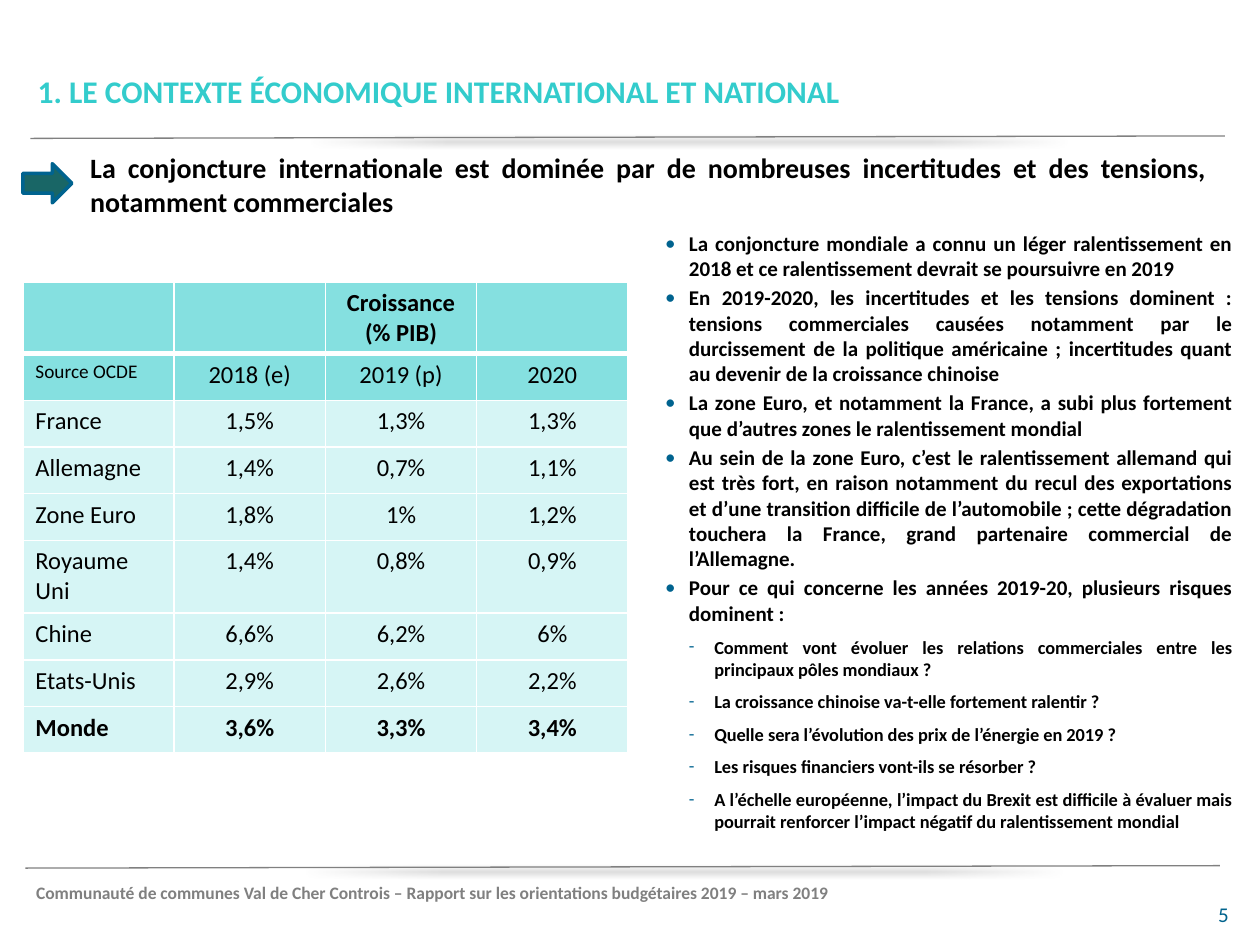
from dataclasses import dataclass

import pptx
import pptx.dml.color
import pptx.enum.shapes
import pptx.enum.text
import pptx.oxml
import pptx.oxml.ns
import pptx.util
from pptx.util import Cm, Pt

ALIGN = pptx.enum.text.PP_ALIGN
ANCHOR = pptx.enum.text.MSO_ANCHOR
NS = pptx.oxml.ns.nsdecls("a")


@dataclass(frozen=True)
class Theme:
    font: str = "Calibri"
    black: str = "000000"
    white: str = "FFFFFF"
    grey: str = "808080"
    turquoise: str = "33CCCC"
    blue: str = "00638F"
    page_blue: str = "00638D"
    arrow: str = "196666"
    header_fill: str = "85E0E0"
    body_fill: str = "D6F5F5"
    title: float = 18
    heading: float = 16
    table: float = 14
    bullet: float = 12
    sub_bullet: float = 10.5
    source: float = 11
    footer: float = 10


T = Theme()

TABLE_ROWS = [
    ("", "", "Croissance (% PIB)", ""),
    ("Source OCDE", "2018 (e)", "2019 (p)", "2020"),
    ("France", "1,5%", "1,3%", "1,3%"),
    ("Allemagne", "1,4%", "0,7%", "1,1%"),
    ("Zone Euro", "1,8%", "1%", "1,2%"),
    ("Royaume Uni", "1,4%", "0,8%", "0,9%"),
    ("Chine", "6,6%", "6,2%", "6%"),
    ("Etats-Unis", "2,9%", "2,6%", "2,2%"),
    ("Monde", "3,6%", "3,3%", "3,4%"),
]
ROW_HEIGHT = 0.94
TALL_ROWS = {0: 1.42, 5: 1.47}

FINDINGS = [
    "La conjoncture mondiale a connu un léger ralentissement en 2018 et ce ralentissement devrait se "
    "poursuivre en 2019",
    "En 2019-2020, les incertitudes et les tensions dominent : tensions commerciales causées notamment "
    "par le durcissement de la politique américaine ; incertitudes quant au devenir de la croissance chinoise",
    "La zone Euro, et notamment la France, a subi plus fortement que d’autres zones le ralentissement mondial",
    "Au sein de la zone Euro, c’est le ralentissement allemand qui est très fort, en raison notamment du "
    "recul des exportations et d’une transition difficile de l’automobile ; cette dégradation touchera la "
    "France, grand partenaire commercial de l’Allemagne.",
    "Pour ce qui concerne les années 2019-20, plusieurs risques dominent :",
]
RISKS = [
    "Comment vont évoluer les relations commerciales entre les principaux pôles mondiaux ?",
    "La croissance chinoise va-t-elle fortement ralentir ?",
    "Quelle sera l’évolution des prix de l’énergie en 2019 ?",
    "Les risques financiers vont-ils se résorber ?",
    "A l’échelle européenne, l’impact du Brexit est difficile à évaluer mais pourrait renforcer l’impact "
    "négatif du ralentissement mondial",
]


def rgb(color):
    return pptx.dml.color.RGBColor.from_string(color)


def add_run(p, text, size, color=T.black, bold=False):
    r = p.add_run()
    r.text = text
    r.font.name = T.font
    r.font.size = Pt(size)
    r.font.bold = bold
    r.font.color.rgb = rgb(color)


def add_frame(s, left, top, width, height):
    """Add an empty wrapping text box and return its text frame."""
    tf = s.shapes.add_textbox(Cm(left), Cm(top), Cm(width), Cm(height)).text_frame
    tf.word_wrap = True
    return tf


def add_text(s, box, text, size, color=T.black, bold=True, align=ALIGN.LEFT, anchor=ANCHOR.TOP):
    tf = add_frame(s, *box)
    tf.vertical_anchor = anchor
    p = tf.paragraphs[0]
    p.alignment = align
    add_run(p, text, size, color, bold)


def add_rule(s, left, top):
    """Add a slightly rising grey line with a soft shadow."""
    c = s.shapes.add_connector(pptx.enum.shapes.MSO_CONNECTOR.STRAIGHT,
                               Cm(left), Cm(top), Cm(left + 24.08), Cm(top - 0.05))
    c.line.color.rgb = rgb(T.grey)
    c.line.width = Pt(0.75)
    c._element.spPr.append(pptx.oxml.parse_xml(
        f'<a:effectLst {NS}><a:outerShdw blurRad="{Pt(4)}" dist="{Pt(3)}" dir="2700000">'
        f'<a:srgbClr val="{T.black}"><a:alpha val="40000"/></a:srgbClr></a:outerShdw></a:effectLst>'))


def add_arrow(s):
    sp = s.shapes.add_shape(pptx.enum.shapes.MSO_SHAPE.RIGHT_ARROW,
                            Cm(0.46), Cm(3.3), Cm(0.99), Cm(0.79))
    sp.shadow.inherit = False
    sp.fill.solid()
    sp.fill.fore_color.rgb = rgb(T.arrow)
    sp.line.color.rgb = rgb(T.blue)
    sp.line.width = Pt(2)


def set_borders(cell, bottom):
    tc_pr = cell._tc.get_or_add_tcPr()
    widths = {"lnL": 1, "lnR": 1, "lnT": 1, "lnB": bottom}
    for i, (side, width) in enumerate(widths.items()):
        tc_pr.insert(i, pptx.oxml.parse_xml(
            f'<a:{side} {NS} w="{Pt(width)}"><a:solidFill><a:srgbClr val="{T.white}"/>'
            f'</a:solidFill></a:{side}>'))


def add_growth_table(s):
    heights = [TALL_ROWS.get(i, ROW_HEIGHT) for i in range(len(TABLE_ROWS))]
    table = s.shapes.add_table(len(TABLE_ROWS), 4, Cm(0.46), Cm(5.69),
                               Cm(12.2), Cm(sum(heights))).table
    for column in table.columns:
        column.width = Cm(3.05)
    for i, (values, height) in enumerate(zip(TABLE_ROWS, heights)):
        table.rows[i].height = Cm(height)
        bold = i in (0, len(TABLE_ROWS) - 1)
        for j, value in enumerate(values):
            cell = table.cell(i, j)
            cell.fill.solid()
            cell.fill.fore_color.rgb = rgb(T.header_fill if i < 2 else T.body_fill)
            set_borders(cell, bottom=3 if i == 0 else 1)
            p = cell.text_frame.paragraphs[0]
            p.alignment = ALIGN.CENTER if j else ALIGN.LEFT
            if value:
                add_run(p, value, T.source if (i, j) == (1, 0) else T.table, bold=bold)


def set_bullet(p, char, margin, hanging):
    p_pr = p._p.get_or_add_pPr()
    p_pr.set("marL", str(Cm(margin)))
    p_pr.set("indent", str(-Cm(hanging)))
    for xml in (f'<a:buClr {NS}><a:srgbClr val="{T.blue}"/></a:buClr>',
                f'<a:buFont {NS} typeface="{T.font}"/>',
                f'<a:buChar {NS} char="{char}"/>'):
        p_pr.append(pptx.oxml.parse_xml(xml))


def add_bullets(s):
    tf = add_frame(s, 13.16, 4.52, 11.94, 8.99)
    levels = [(FINDINGS, "•", 0.48, 0.48, T.bullet, 2.4),
              (RISKS, "-", 0.99, 0.51, T.sub_bullet, 6)]
    for level, (texts, char, margin, hanging, size, space) in enumerate(levels):
        for i, text in enumerate(texts):
            first = level == 0 and i == 0
            p = tf.paragraphs[0] if first else tf.add_paragraph()
            set_bullet(p, char, margin, hanging)
            p.level = level
            p.alignment = ALIGN.JUSTIFY
            if not first:
                p.space_before = Pt(space)
            add_run(p, text, size, bold=True)


def main():
    prs = pptx.Presentation()
    prs.slide_width, prs.slide_height = Cm(25.4), Cm(19.05)
    s = prs.slides.add_slide(prs.slide_layouts[6])

    add_rule(s, 0.61, 2.79)
    add_text(s, (0.48, 17.65, 22.4, 0.69),
             "Communauté de communes Val de Cher Controis – Rapport sur les orientations "
             "budgétaires 2019 – mars 2019", T.footer, T.grey)
    add_rule(s, 0.51, 17.5)
    add_text(s, (19.1, 17.91, 5.92, 1.02), "5", T.bullet, T.page_blue, bold=False,
             align=ALIGN.RIGHT, anchor=ANCHOR.MIDDLE)
    add_text(s, (1.57, 2.92, 23.01, 8.99),
             "La conjoncture internationale est dominée par de nombreuses incertitudes et des "
             "tensions, notamment commerciales", T.heading, align=ALIGN.JUSTIFY)
    add_arrow(s)
    add_text(s, (0.51, 1.32, 18.8, 1.6),
             "1. LE CONTEXTE ÉCONOMIQUE INTERNATIONAL ET NATIONAL", T.title, T.turquoise)
    add_growth_table(s)
    add_bullets(s)
    prs.save("out.pptx")


if __name__ == "__main__":
    main()
